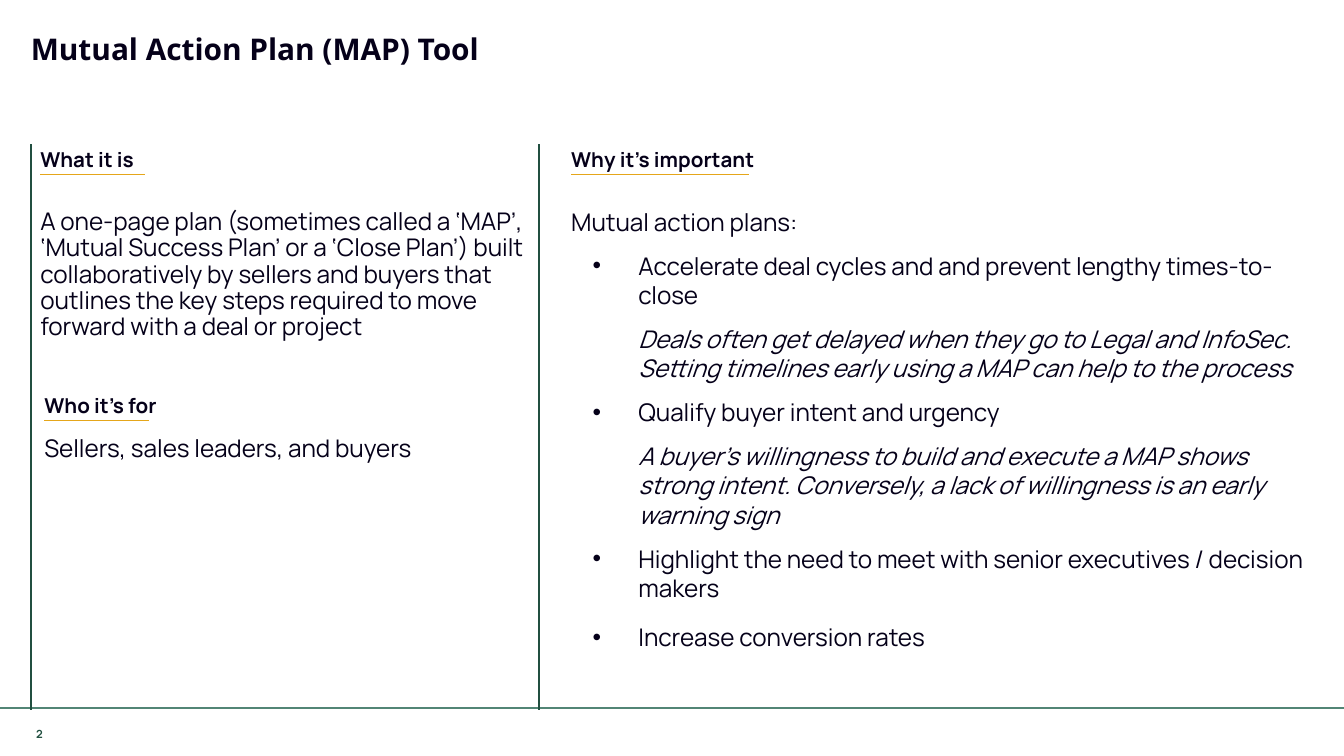
from lxml import etree
from pptx import Presentation, util as u
from pptx.dml.color import RGBColor
from pptx.enum import shapes, text
from pptx.oxml.ns import qn

WIDTH = 10
HEIGHT = WIDTH * 9 / 16
COLORS = {"ink": "050019", "green": "214F40", "footer": "528575", "gold": "E5A61A"}
BODY_FONT, TITLE_FONT = "Manrope", "Open Sans"

# Content
TITLE = "Mutual Action Plan (MAP) Tool"
PAGE_NUMBER = "2"
DEFINITION = (
    "A one-page plan (sometimes called a ‘MAP’, ‘Mutual Success Plan’ or a "
    "‘Close Plan’) built collaboratively by sellers and buyers that outlines "
    "the key steps required to move forward with a deal or project"
)
AUDIENCE = "Sellers, sales leaders, and buyers"
# Each entry: kind, text, space before
REASONS = [
    ("plain", "Mutual action plans:", 0),
    ("bullet", "Accelerate deal cycles and and prevent lengthy times-to-close", 8),
    ("detail", "Deals often get delayed when they go to Legal and InfoSec. Setting "
               "timelines early using a MAP can help to the process", 8),
    ("bullet", "Qualify buyer intent and urgency", 8),
    ("detail", "A buyer’s willingness to build and execute a MAP shows strong intent. "
               "Conversely, a lack of willingness is an early warning sign", 8),
    ("bullet", "Highlight the need to meet with senior executives / decision makers", 8),
    ("bullet", "Increase conversion rates", 10.8),
]

# Columns and rows
LEFT, AUDIENCE_LEFT, RIGHT = 0.3, 0.33, 4.25
TOP, FOOTER_TOP = 1.07, 5.27
# Each section: heading, left, top, underline width, body top, body size,
# paragraphs, line spacing
SECTIONS = [
    ("What it is", LEFT, TOP, 0.78, 1.56, (3.63, 0.8), [("plain", DEFINITION, 0)], 0.9),
    ("Who it’s for", AUDIENCE_LEFT, 2.9, 0.78, 3.25, (3.63, 1.98),
     [("plain", AUDIENCE, 0)], 0.9),
    ("Why it’s important", RIGHT, TOP, 1.32, 1.54, (5.55, 3.36), REASONS, 1.0),
]
DIVIDERS = [0.23, 4.01]


def color(name):
    return RGBColor.from_string(COLORS[name])


def set_font(paragraph, size, name=BODY_FONT, tone="ink", bold=False, italic=False):
    font = paragraph.font
    font.size, font.name, font.bold, font.italic = u.Pt(size), name, bold, italic
    font.color.rgb = color(tone)


def set_frame(frame, side=0, edge=0, anchor=text.MSO_ANCHOR.TOP):
    frame.word_wrap = True
    frame.auto_size = text.MSO_AUTO_SIZE.NONE
    frame.vertical_anchor = anchor
    frame.margin_left = frame.margin_right = u.Inches(side)
    frame.margin_top = frame.margin_bottom = u.Inches(edge)


def add_text_box(slide, left, top, width, height):
    box = slide.shapes.add_textbox(*map(u.Inches, (left, top, width, height)))
    set_frame(box.text_frame)
    return box.text_frame


def add_line(slide, x1, y1, x2, y2, tone, weight=0.75):
    line = slide.shapes.add_connector(
        shapes.MSO_CONNECTOR.STRAIGHT, *map(u.Inches, (x1, y1, x2, y2)))
    line.line.color.rgb = color(tone)
    line.line.width = u.Pt(weight)
    etree.SubElement(line._element.spPr, qn("a:effectLst"))


def set_indent(paragraph, kind):
    properties = paragraph._p.get_or_add_pPr()
    properties.set("marL", str(u.Inches(0.5)))
    if kind == "bullet":
        properties.set("indent", str(u.Inches(-0.34)))
        tint = etree.SubElement(properties, qn("a:buClr"))
        etree.SubElement(tint, qn("a:srgbClr"), val=COLORS["ink"])
        etree.SubElement(properties, qn("a:buFont"), typeface="Arial")
        etree.SubElement(properties, qn("a:buChar"), char="•")


def add_section(slide, heading, left, top, underline, body_top, size, paragraphs, spacing):
    # Heading with its underline
    paragraph = add_text_box(slide, left, top, 3.28, 0.19).paragraphs[0]
    paragraph.text = heading
    paragraph.line_spacing = 1.15
    set_font(paragraph, 11, bold=True)
    add_line(slide, left, top + 0.23, left + underline, top + 0.23, "gold")

    # Body
    frame = add_text_box(slide, left, body_top, *size)
    for index, (kind, words, space) in enumerate(paragraphs):
        paragraph = frame.add_paragraph() if index else frame.paragraphs[0]
        paragraph.text = words
        if kind != "plain":
            set_indent(paragraph, kind)
        paragraph.line_spacing = spacing
        paragraph.space_before = u.Pt(space)
        set_font(paragraph, 13, italic=kind == "detail")


def main():
    presentation = Presentation()
    presentation.slide_width = u.Inches(WIDTH)
    presentation.slide_height = u.Inches(HEIGHT)
    slide = presentation.slides.add_slide(presentation.slide_layouts[5])

    # Title
    title = slide.shapes.title
    title.left, title.top, title.width, title.height = map(
        u.Inches, (0.16, 0.16, 4.01, 0.44))
    set_frame(title.text_frame, 0.07, 0.04, text.MSO_ANCHOR.MIDDLE)
    paragraph = title.text_frame.paragraphs[0]
    paragraph.text = TITLE
    paragraph.alignment = text.PP_ALIGN.LEFT
    paragraph.line_spacing = 0.9
    set_font(paragraph, 16, TITLE_FONT, bold=True)

    # Footer rule and page number
    add_line(slide, 0, FOOTER_TOP, WIDTH, FOOTER_TOP, "footer", 1)
    frame = add_text_box(slide, 0.23, 5.37, 0.17, 0.18)
    set_frame(frame, 0.04, 0.04, text.MSO_ANCHOR.MIDDLE)
    frame.paragraphs[0].text = PAGE_NUMBER
    set_font(frame.paragraphs[0], 6, tone="green", bold=True)

    # Column dividers
    for x in DIVIDERS:
        add_line(slide, x, FOOTER_TOP + 0.01, x, TOP, "green")

    # Sections
    for section in SECTIONS:
        add_section(slide, *section)

    presentation.save("out.pptx")


if __name__ == "__main__":
    main()
